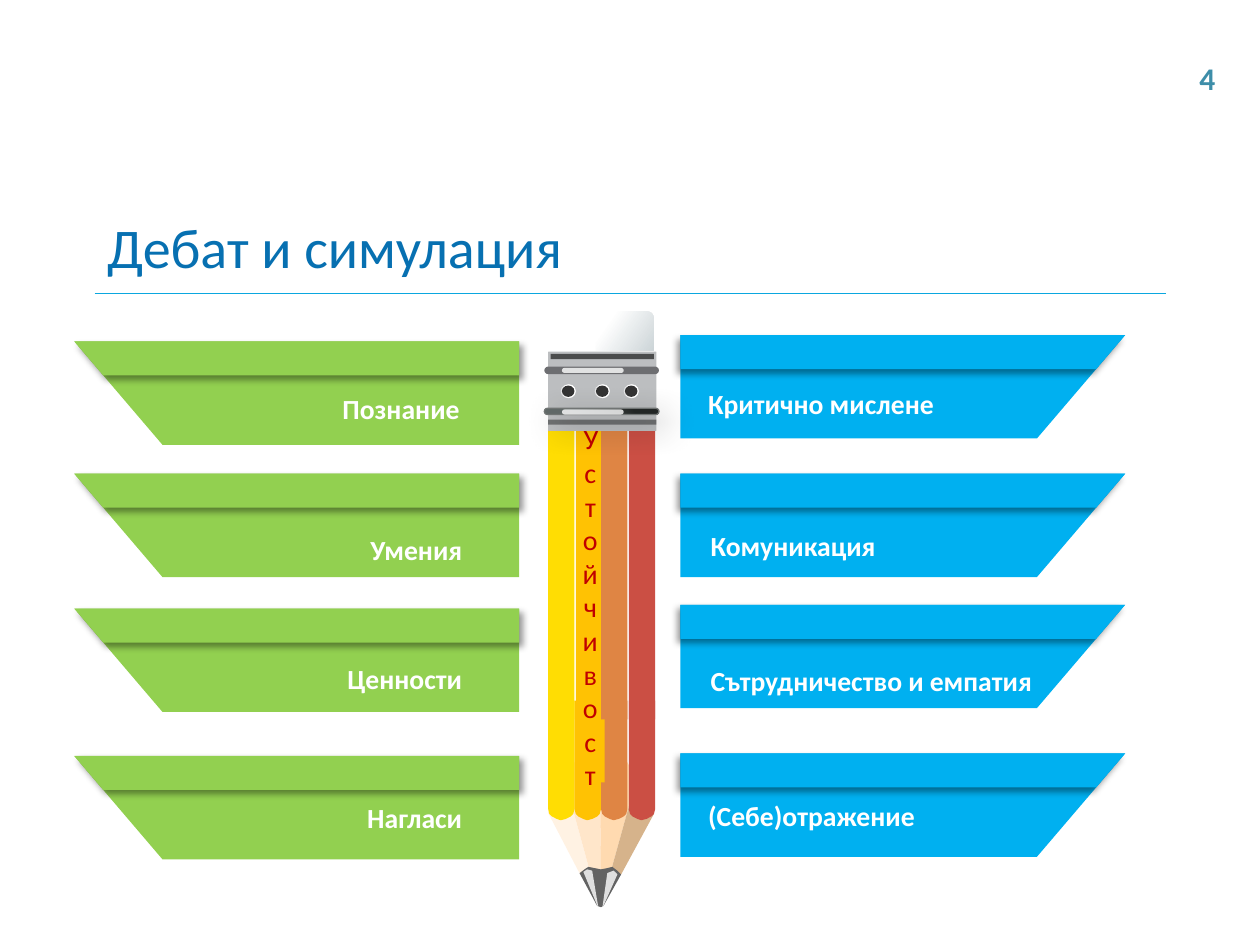
from dataclasses import dataclass

from lxml import etree
from pptx import Presentation
from pptx import util as u
from pptx.dml.color import RGBColor
from pptx.enum import shapes, text
from pptx.oxml.ns import qn

PX = 9144  # EMU in one px: 100 px to the inch


@dataclass(frozen=True)
class Theme:
    font: str = "Calibri"
    title: str = "0770B1"
    rule: str = "0BA7DF"
    number: str = "3E8EA9"
    white: str = "FFFFFF"
    black: str = "000000"
    green: str = "92D050"
    blue: str = "00B0F0"
    letters: str = "C00000"
    stripes: tuple = ("FFDD03", "FFC203", "DF8544", "CB4F44")
    wood: tuple = ("FFF2E3", "FFE6CA", "FFDAB0", "D6B38B")
    lead: str = "636363"
    metal: str = "BCBEC0"
    rod: str = "6D6E71"
    rod_edge: str = "707473"
    rod_shade: tuple = ("606867", "222625")
    stud_rim: str = "E6E7E8"
    eraser: tuple = ("FFFFFF", "CDD5D8")
    title_size: float = 32
    number_size: float = 18
    label_size: float = 15.8
    letter_size: float = 16


T = Theme()
SHAPE = shapes.MSO_SHAPE
ALIGN = text.PP_ALIGN

# label, banner top, label left, label top, label width
SKILLS_LEFT = [
    ("Познание", 271, 152, 307, 242),
    ("Умения", 376, 154, 419, 242),
    ("Ценности", 483, 146, 521, 250),
    ("Нагласи", 600, 146, 632, 250),
]
SKILLS_RIGHT = [
    ("Критично мислене", 266, 558, 303, 200),
    ("Комуникация", 376, 560, 416, 284),
    ("Сътрудничество и емпатия", 480, 560, 523, 273),
    ("(Себе)отражение", 598, 558, 630, 234),
]


def px(*values):
    return [u.Emu(v * PX) for v in values]


def set_alpha(color, percent):
    etree.SubElement(color, qn("a:alpha")).set("val", str(percent * 1000))


def paint(sp, color, alpha=100):
    """Solid fill, no line, no shadow."""
    sp.shadow.inherit = False
    sp.fill.solid()
    sp.fill.fore_color.rgb = RGBColor.from_string(color)
    sp.line.fill.background()
    if alpha < 100:
        set_alpha(sp._element.spPr.find(qn("a:solidFill"))[0], alpha)
    return sp


def blend(sp, colors, positions, angle):
    sp.fill.gradient()
    sp.fill.gradient_angle = angle
    for stop, color, position in zip(sp.fill.gradient_stops, colors, positions):
        stop.color.rgb = RGBColor.from_string(color)
        stop.position = position


def cast_shadow(sp, blur, distance, angle):
    effects = sp._element.spPr.find(qn("a:effectLst"))
    shadow = etree.SubElement(effects, qn("a:outerShdw"), blurRad=str(u.Pt(blur)),
                              dist=str(u.Pt(distance)), dir=str(angle * 60000),
                              algn="ctr", rotWithShape="0")
    color = etree.SubElement(shadow, qn("a:srgbClr"), val=T.black)
    set_alpha(color, 40)


def polygon(parent, points, color, alpha=100):
    builder = parent.shapes.build_freeform(*points[0], scale=float(PX))
    builder.add_line_segments(points[1:], close=True)
    return paint(builder.convert_to_shape(), color, alpha)


def preset(parent, kind, box, color, alpha=100, rounding=None):
    sp = paint(parent.shapes.add_shape(kind, *px(*box)), color, alpha)
    if rounding is not None:
        sp.adjustments[0] = rounding
    return sp


def write(tf, words, size, color, bold=False, align=ALIGN.LEFT, insets=None):
    if insets:
        (tf.margin_left, tf.margin_top,
         tf.margin_right, tf.margin_bottom) = px(*insets)
    p = tf.paragraphs[0]
    p.alignment = align
    r = p.add_run()
    r.text = words
    r.font.name, r.font.size, r.font.bold = T.font, u.Pt(size), bold
    r.font.color.rgb = RGBColor.from_string(color)


def add_title(slide):
    title = slide.shapes.title
    title.left, title.top, title.width, title.height = px(75, 158, 850, 75)
    tf = title.text_frame
    tf.auto_size = text.MSO_AUTO_SIZE.NONE
    tf.vertical_anchor = text.MSO_ANCHOR.MIDDLE
    write(tf, "Дебат и симулация", T.title_size, T.title)
    rule = slide.shapes.add_connector(shapes.MSO_CONNECTOR.STRAIGHT, *px(75, 233, 925, 233))
    rule.line.color.rgb = RGBColor.from_string(T.rule)
    rule.line.width = u.Pt(0.75)
    etree.SubElement(rule._element.spPr, qn("a:effectLst"))


def add_banner(slide, inner, top, side, color, shadow_angle):
    """Slanted banner that runs from its inner edge outwards; side is -1 or 1."""
    group = slide.shapes.add_group_shape()
    outer = inner + side * 353
    for height, slant in ((82, 70), (27, 23)):
        sp = polygon(group, [(inner, top), (outer, top),
                             (outer - side * slant, top + height),
                             (inner, top + height)], color)
    cast_shadow(sp, 4, 3, shadow_angle)


def add_label(slide, words, box, align, insets):
    tf = slide.shapes.add_textbox(*px(*box)).text_frame
    tf.word_wrap = True
    write(tf, words, T.label_size, T.white, True, align, insets)


def add_point(pencil):
    wood = [
        [(448, 618), (435, 645), (460, 693), (468, 691)],
        [(477, 690), (476, 605), (455, 605), (448, 618), (468, 691)],
        [(485, 691), (505, 619), (498, 605), (476, 605), (477, 690)],
        [(493, 694), (519, 646), (505, 619), (485, 691)],
    ]
    for points, color in zip(wood, T.wood):
        polygon(pencil, points, color)
    polygon(pencil, [(460, 693), (464, 690), (467, 688), (472, 689), (477, 690), (482, 689),
                     (486, 688), (490, 691), (493, 694), (479, 719), (477, 720), (474, 719)],
            T.lead)


def add_stripes(pencil):
    lefts = (435, 456, 477, 499)
    half_end = [(0, 556), (0, 642), (1, 646), (3, 648), (7, 650)]
    end = half_end + [(10, 651)] + [(21 - x, y) for x, y in reversed(half_end)]
    for left, color in zip(lefts, T.stripes):
        polygon(pencil, [(left + x, y) for x, y in end], color)
    for i, (left, color) in enumerate(zip(lefts, T.stripes)):
        lettered = i == 1
        box = (457, 342, 23, 279) if lettered else (left, 286, 21, 285)
        sp = preset(pencil, SHAPE.RECTANGLE, box, color)
        if lettered:
            sp.text_frame.word_wrap = True
            sp.text_frame.vertical_anchor = text.MSO_ANCHOR.MIDDLE
            write(sp.text_frame, "Устойчивост", T.letter_size, T.letters,
                  align=ALIGN.CENTER, insets=(5, 5, 5, 5))


def add_ferrule(pencil):
    preset(pencil, SHAPE.ROUND_2_SAME_RECTANGLE, (436, 245, 84, 63), T.white, rounding=0.18)
    preset(pencil, SHAPE.ROUNDED_RECTANGLE, (435, 279, 86, 63), T.metal, rounding=0.01)
    preset(pencil, SHAPE.ROUNDED_RECTANGLE, (432, 291, 91, 6), T.rod, rounding=0.5)
    preset(pencil, SHAPE.RECTANGLE, (437, 281, 82, 4), T.black, 60)
    preset(pencil, SHAPE.RECTANGLE, (435, 333, 86, 4), T.black, 40)
    rod = preset(pencil, SHAPE.ROUNDED_RECTANGLE, (432, 324, 91, 5), T.rod, rounding=0.5)
    blend(rod, T.rod_shade, (0.24, 0.79), 31)
    rod.line.color.rgb = RGBColor.from_string(T.rod_edge)
    rod.line.width = u.Pt(0.75)
    cast_shadow(rod, 19, 8, 45)
    for top in (292, 325):
        preset(pencil, SHAPE.ROUNDED_RECTANGLE, (446, top, 49, 4), T.white, 80, 0.5)
    for x in (445, 472, 495):
        preset(pencil, SHAPE.OVAL, (x, 305, 12, 11), T.stud_rim)
        preset(pencil, SHAPE.OVAL, (x + 1, 305, 11, 11), T.white)
        preset(pencil, SHAPE.OVAL, (x + 1, 306, 10, 9), T.black, 80)
    eraser = preset(pencil, SHAPE.ROUND_2_SAME_RECTANGLE, (473, 247, 46, 31), T.white,
                    rounding=0.18)
    blend(eraser, T.eraser, (0.23, 1), 325)


def add_pencil(slide):
    pencil = slide.shapes.add_group_shape()
    add_point(pencil)
    add_stripes(pencil)
    for glint in ([(490, 694), (478, 721), (482, 693), (487, 691)],
                  [(463, 692), (475, 721), (470, 691), (466, 690)]):
        polygon(pencil, glint, T.white, 80)
    add_ferrule(pencil)


def main():
    prs = Presentation()
    prs.slide_width, prs.slide_height = px(1000, 750)
    slide = prs.slides.add_slide(prs.slide_layouts[5])
    add_title(slide)
    sides = [(SKILLS_LEFT, 412, -1, T.green, 45, ALIGN.RIGHT, (4, 4, 29, 4)),
             (SKILLS_RIGHT, 540, 1, T.blue, 129, ALIGN.LEFT, (4, 4, 4, 4))]
    for skills, inner, side, color, shadow_angle, align, insets in sides:
        for words, top, left, label_top, width in skills:
            add_banner(slide, inner, top, side, color, shadow_angle)
            add_label(slide, words, (left, label_top, width, 34), align, insets)
    add_pencil(slide)
    number = slide.shapes.add_textbox(*px(942, 42, 33, 40))
    number.text_frame.word_wrap = False
    write(number.text_frame, "4", T.number_size, T.number, True)
    prs.save("out.pptx")


if __name__ == "__main__":
    main()
